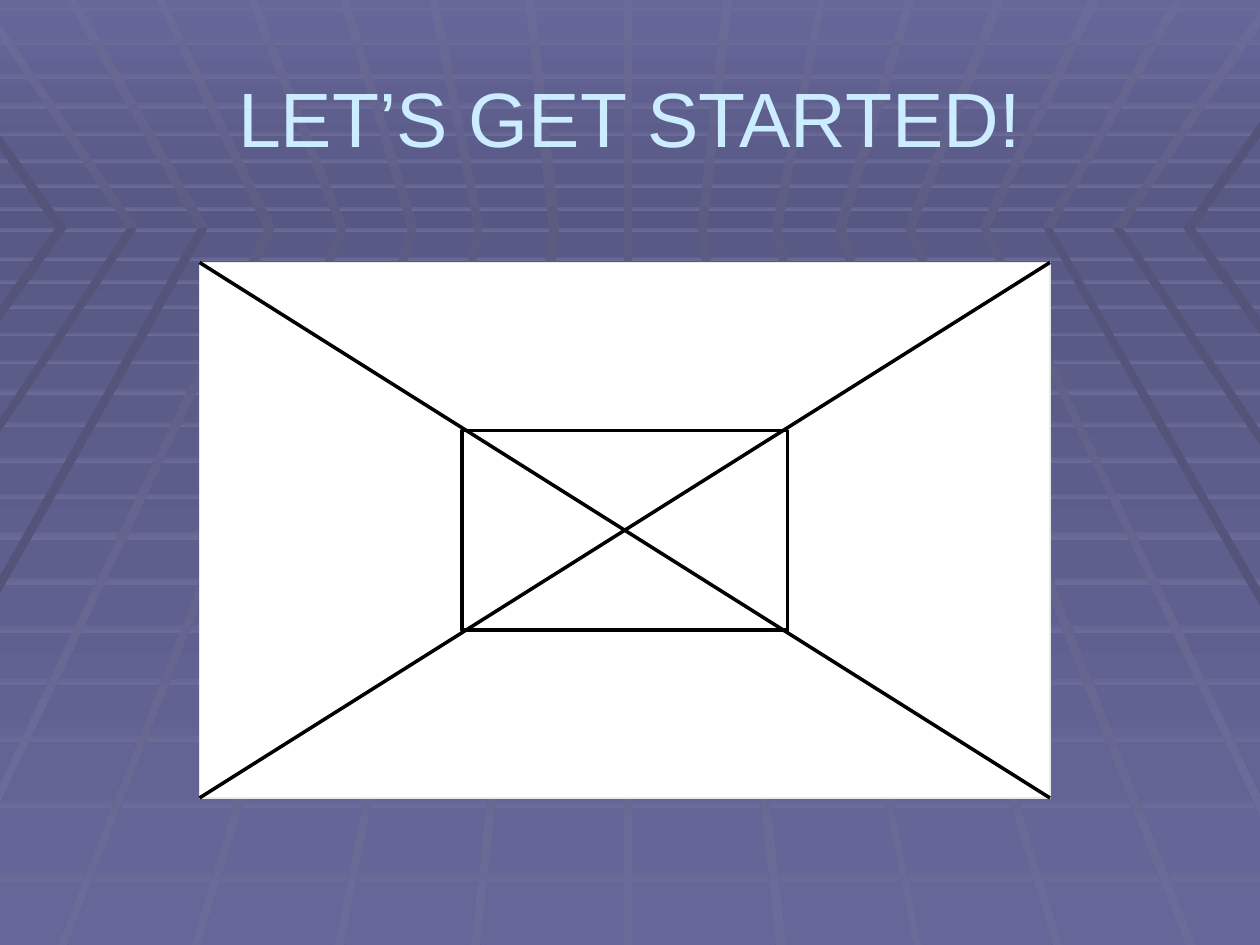
from lxml import etree
from pptx import Presentation
from pptx.dml.color import RGBColor
from pptx.enum.shapes import MSO_CONNECTOR as Connector, MSO_SHAPE as Shape
from pptx.enum.text import MSO_ANCHOR as Anchor, PP_ALIGN as Align
from pptx.oxml.ns import qn
from pptx.util import Pt

WIDTH, HEIGHT, HORIZON = 720, 540, 130.3

WHITE = RGBColor(0xFF, 0xFF, 0xFF)
BLACK = RGBColor(0x00, 0x00, 0x00)
PALE_GREY = RGBColor(0xEA, 0xEA, 0xEA)
TITLE_BLUE = RGBColor(0xCC, 0xEC, 0xFF)
FLOOR_DARK = RGBColor(0x54, 0x54, 0x7E)
CEILING_DARK = RGBColor(0x57, 0x57, 0x83)
SLATE = RGBColor(0x66, 0x66, 0x99)
GRID_LIGHT = RGBColor(0x6B, 0x6B, 0x99)
RAY_DARK = RGBColor(0x5C, 0x5C, 0x83)
RAY_SHORT = RGBColor(0x54, 0x54, 0x7A)
ROW_1 = RGBColor(0x60, 0x60, 0x8A)
ROW_2 = RGBColor(0x62, 0x62, 0x8C)
ROW_3 = RGBColor(0x64, 0x64, 0x8E)
ROW_4 = RGBColor(0x65, 0x65, 0x91)
ROW_5 = RGBColor(0x67, 0x67, 0x93)
ROW_6 = RGBColor(0x68, 0x68, 0x95)

# Top, height and upper colour of each horizontal grid line
ROWS = [
    (2.9, 3.6, ROW_6), (23, 2.9, ROW_6), (42.5, 2.9, ROW_5), (59, 3.2, ROW_4),
    (74.9, 2.9, ROW_1), (90.7, 2.2, ROW_2), (105.1, 2.2, ROW_2),
    (118.1, 2.2, ROW_2), (HORIZON, 2.2, ROW_2), (146.9, 2.2, ROW_1),
    (159.8, 2.2, ROW_1), (174.2, 2.2, ROW_1), (190.1, 1.6, ROW_1),
    (205.9, 1.6, ROW_1), (222.5, 2.9, ROW_1), (241.2, 2.9, ROW_1),
    (261.4, 2.9, ROW_2), (282.2, 2.9, ROW_3), (303.8, 4.6, ROW_3),
    (330.5, 3.6, ROW_4), (357.1, 4.6, ROW_4), (388.1, 3.6, ROW_5),
    (420.5, 3.6, ROW_5), (457.9, 3.6, ROW_6), (498.2, 5.4, ROW_6),
]

# Left and right x at the horizon, at the top edge and at the bottom edge
FULL_RAYS = [
    (356.4, 361.4, 356.4, 361.4, 356.4, 361.4),
    (313.9, 319.7, 300.2, 305.3, 269.3, 274.3),
    (271.4, 275.8, 245.5, 250.6, 191.5, 196.6),
    (233.3, 238.3, 194.4, 199.4, 109.4, 114.5),
    (193, 198, 141.8, 146.9, 33.1, 38.2),
    (398.9, 403.9, 413.3, 418.3, 443.5, 449.3),
    (441.4, 446.4, 467.3, 471.6, 522, 526.3),
    (477.4, 483.1, 517.7, 522.7, 601.9, 607),
    (517.3, 522.7, 568.1, 573.8, 677.5, 683.3),
]

# Left and right x at the horizon, then the two end points of the ray
CUT_RAYS = [
    (151.2, 157, (89.3, 0), (94.3, 0)),
    (113, 118.8, (38.2, 0), (43.9, 0)),
    (72.7, 78.5, (0, 21.6), (0, 13.7)),
    (31.7, 38.2, (0, 85.7), (0, 77)),
    (560.2, 565.2, (622.1, 0), (627.8, 0)),
    (596.2, 601.2, (670.3, 0), (676.1, 0)),
    (635.8, 641.5, (WIDTH, 5.8), (WIDTH, 15.1)),
    (676.1, 682.6, (WIDTH, 69.8), (WIDTH, 78.5)),
    (151.2, 157, (0, 447.8), (0, 458.6)),
    (113, 118.8, (0, 329), (0, 339.1)),
    (72.7, 78.5, (0, 239), (0, 247)),
    (31.7, 38.2, (0, 175), (0, 183.6)),
    (560.2, 565.2, (WIDTH, 465.8), (WIDTH, 454.3)),
    (596.2, 601.2, (WIDTH, 346.3), (WIDTH, 336.2)),
    (635.8, 641.5, (WIDTH, 254.2), (WIDTH, 245.5)),
    (676.1, 682.6, (WIDTH, 190.8), (WIDTH, 181.4)),
]


def fill_downward(fill, upper, lower):
    """Fill with a vertical gradient, or plainly if both colours agree."""
    if upper == lower:
        fill.solid()
        fill.fore_color.rgb = upper
        return
    fill.gradient()
    fill.gradient_angle = 270
    for stop, colour in zip(fill.gradient_stops, (upper, lower)):
        stop.color.rgb = colour


def add_panel(group, corners, upper, lower):
    points = [(Pt(x), Pt(y)) for x, y in corners]
    builder = group.shapes.build_freeform(*points[0])
    builder.add_line_segments(points[1:], close=True)
    panel = builder.convert_to_shape()
    panel.shadow.inherit = False
    panel.line.fill.background()
    fill_downward(panel.fill, upper, lower)


deck = Presentation()
deck.slide_width, deck.slide_height = Pt(WIDTH), Pt(HEIGHT)
page = deck.slides.add_slide(deck.slide_layouts[5])
fill_downward(page.background.fill, FLOOR_DARK, SLATE)

# Perspective grid
grid = page.shapes.add_group_shape()
ceiling = [(0, 0), (WIDTH, 0), (WIDTH, HORIZON), (0, HORIZON)]
add_panel(grid, ceiling, SLATE, CEILING_DARK)
for top, height, colour in ROWS:
    bottom = top + height
    row = [(0, top), (WIDTH, top), (WIDTH, bottom), (0, bottom)]
    add_panel(grid, row, colour, GRID_LIGHT)

rays = list(CUT_RAYS)
for left, right, top_left, top_right, bottom_left, bottom_right in FULL_RAYS:
    rays.append((left, right, (top_left, 0), (top_right, 0)))
    rays.append((left, right, (bottom_left, HEIGHT), (bottom_right, HEIGHT)))
for left, right, left_end, right_end in rays:
    end_y = left_end[1]
    if 50 < end_y < 350:
        colours = RAY_SHORT, RAY_SHORT
    elif end_y < HORIZON:
        colours = GRID_LIGHT, RAY_DARK
    else:
        colours = RAY_DARK, GRID_LIGHT
    ray = [(left, HORIZON), left_end, right_end, (right, HORIZON)]
    add_panel(grid, ray, *colours)

# Title, in front of the grid
title = page.shapes.title
page.shapes.element.append(title.element)
title.left, title.top, title.width, title.height = Pt(36), Pt(21.6), Pt(648), Pt(90)
title.text_frame.text = "LET’S GET STARTED!"
title.text_frame.vertical_anchor = Anchor.MIDDLE
para = title.text_frame.paragraphs[0]
para.alignment = Align.CENTER
font = para.runs[0].font
font.name, font.size, font.color.rgb = "Arial", Pt(44), TITLE_BLUE

# Room drawing: outer wall, diagonals, back wall
left, top, right, bottom = Pt(114), Pt(150), Pt(600), Pt(456)
outer = page.shapes.add_shape(Shape.RECTANGLE, left, top, right - left, bottom - top)
outer.shadow.inherit = False
outer.fill.solid()
outer.fill.fore_color.rgb = WHITE
outer.line.color.rgb = PALE_GREY
outer.line.width = Pt(0.75)

for start_y, end_y in ((top, bottom), (bottom, top)):
    diagonal = page.shapes.add_connector(Connector.STRAIGHT, left, start_y, right, end_y)
    diagonal.line.color.rgb = BLACK
    diagonal.line.width = Pt(2)
    etree.SubElement(diagonal.element.spPr, qn("a:effectLst"))

back_wall = page.shapes.add_shape(Shape.RECTANGLE, Pt(264), Pt(246), Pt(186), Pt(114))
back_wall.shadow.inherit = False
back_wall.fill.background()
back_wall.line.color.rgb = BLACK
back_wall.line.width = Pt(2)

deck.save("out.pptx")
